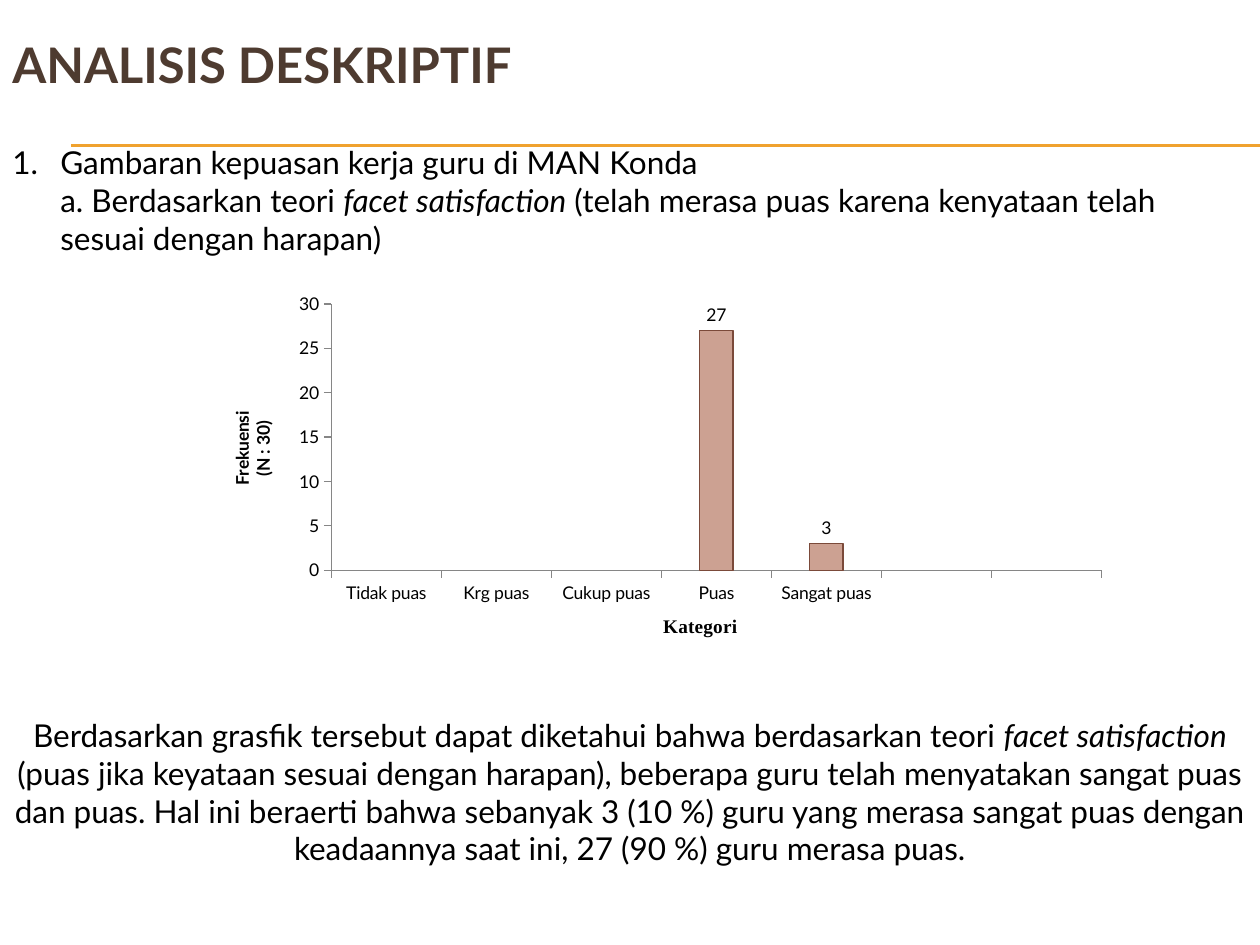
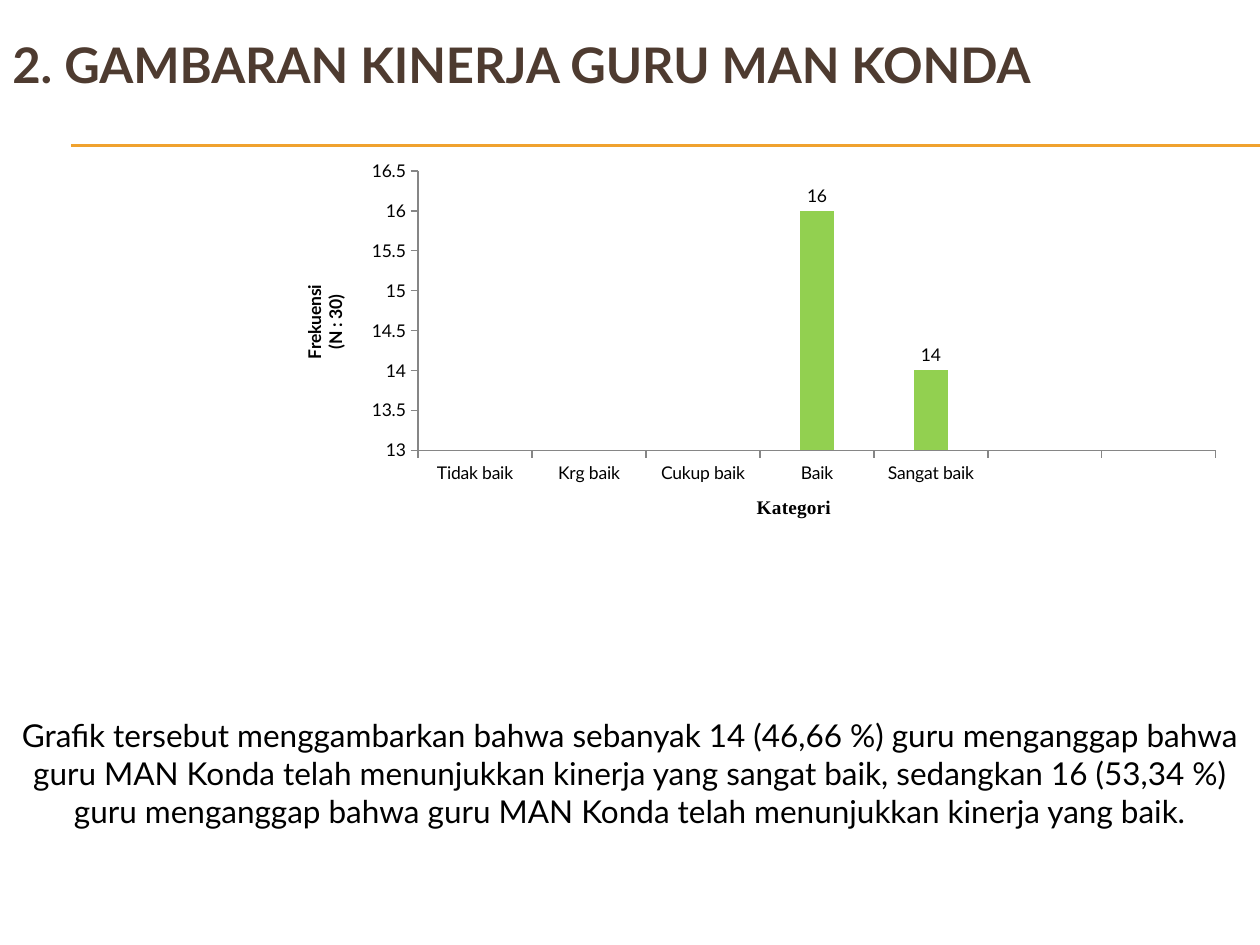
from lxml import etree
from pptx import Presentation
from pptx.chart.data import CategoryChartData
from pptx.dml.color import RGBColor
from pptx.enum.chart import XL_CHART_TYPE, XL_LABEL_POSITION, XL_TICK_LABEL_POSITION, XL_TICK_MARK
from pptx.enum.shapes import MSO_CONNECTOR
from pptx.enum.text import MSO_ANCHOR, PP_ALIGN
from pptx.oxml.ns import qn
from pptx.util import Emu, Pt

COLUMNS = XL_CHART_TYPE.COLUMN_CLUSTERED
OUTSIDE_END = XL_LABEL_POSITION.OUTSIDE_END
LABELS_LOW = XL_TICK_LABEL_POSITION.LOW
TICK_OUTSIDE, TICK_NONE = XL_TICK_MARK.OUTSIDE, XL_TICK_MARK.NONE
STRAIGHT = MSO_CONNECTOR.STRAIGHT
TOP, MIDDLE = MSO_ANCHOR.TOP, MSO_ANCHOR.MIDDLE
LEFT, CENTER = PP_ALIGN.LEFT, PP_ALIGN.CENTER

PX_PER_INCH = 126
WIDTH, HEIGHT = 1260, 945
LIST_INDENT = 48
PLOT_AREA = {"x": 0.14, "y": 0.062, "w": 0.815, "h": 0.72}
CATEGORY_COUNT = 7


def px(length):
    return Emu(round(length * 914400 / PX_PER_INCH))


def rgb(hex_string):
    return RGBColor.from_string(hex_string)


class Deck:
    FONT, SERIF = "Lato", "Times New Roman"
    TITLE, TEXT, ACCENT, AXIS = "4E3B30", "000000", "F0A22E", "868686"
    THIRD_SERIES = "B58B80"

    def __init__(self):
        self.presentation = Presentation()
        self.presentation.slide_width = px(WIDTH)
        self.presentation.slide_height = px(HEIGHT)
        self.slide = None

    def add_slide(self, title):
        """Start a slide with the shared title and double rule."""
        self.slide = self.presentation.slides.add_slide(self.presentation.slide_layouts[6])
        for y in (145, 146):
            self.rule(71, WIDTH, y)
        self.text((0, 0, WIDTH, 129), [[title]], size=28, color=self.TITLE, bold=True)

    def rule(self, left, right, y):
        line = self.slide.shapes.add_connector(STRAIGHT, px(left), px(y), px(right), px(y))
        line.line.color.rgb = rgb(self.ACCENT)
        line.line.width = Pt(0.75)
        etree.SubElement(line._element.spPr, qn("a:effectLst"))

    def style(self, font, size, color, bold=False, name=FONT):
        font.name, font.size, font.bold = name, Pt(size), bold
        font.color.rgb = rgb(color)

    def text(self, box, paragraphs, size=18, color=TEXT, bold=False,
             align=LEFT, anchor=MIDDLE, top_inset=6):
        """Add a text box; every second run of a paragraph is italic."""
        shape = self.slide.shapes.add_textbox(*map(px, box))
        frame = shape.text_frame
        frame.word_wrap = True
        frame.vertical_anchor = anchor
        frame.margin_top = px(top_inset)
        for index, runs in enumerate(paragraphs):
            paragraph = frame.add_paragraph() if index else frame.paragraphs[0]
            paragraph.alignment = align
            self.style(paragraph.font, size, color, bold)
            for position, words in enumerate(runs):
                run = paragraph.add_run()
                run.text = words
                if position % 2:
                    run.font.italic = True
        return frame

    def numbered_text(self, box, paragraphs):
        """Number the first paragraph and indent the others below it."""
        frame = self.text(box, paragraphs)
        for index, paragraph in enumerate(frame.paragraphs):
            properties = paragraph._p.get_or_add_pPr()
            properties.set("marL", str(px(LIST_INDENT)))
            if index == 0:
                properties.set("indent", str(-px(LIST_INDENT)))
                number = etree.Element(qn("a:buAutoNum"), type="arabicPeriod")
                properties.insert_element_before(number, "a:tabLst", "a:defRPr", "a:extLst")

    def conclusion(self, *runs):
        self.text((0, 640, WIDTH, 305), [runs], align=CENTER, anchor=TOP, top_inset=76)

    def axis_title(self, axis, words, size, name):
        frame = axis.axis_title.text_frame
        frame.text = words
        for paragraph in frame.paragraphs:
            self.style(paragraph.font, size, self.TEXT, True, name)
        return frame

    def frequency_chart(self, box, categories, frequencies, scale, color, outline=None):
        """Draw frequencies by category; scale is minimum, maximum and step."""
        data = CategoryChartData()
        data.categories = categories + [""] * (CATEGORY_COUNT - len(categories))
        empty = [None] * CATEGORY_COUNT
        values = frequencies + [None] * (CATEGORY_COUNT - len(frequencies))
        for number, series_values in enumerate((empty, values, empty), 1):
            data.add_series(f"Series {number}", series_values)
        chart = self.slide.shapes.add_chart(COLUMNS, *map(px, box), data).chart
        chart.has_legend = chart.has_title = False
        self.style(chart.font, 10, self.TEXT)

        plot = chart.plots[0]
        plot.gap_width, plot.overlap = 30, 0
        plot.vary_by_categories = False
        for series, fill in zip(plot.series, (self.ACCENT, color, self.THIRD_SERIES)):
            series.format.fill.solid()
            series.format.fill.fore_color.rgb = rgb(fill)
            series.data_labels.show_value = True
            series.data_labels.position = OUTSIDE_END
        if outline:
            plot.series[1].format.line.color.rgb = rgb(outline)
            plot.series[1].format.line.width = Pt(0.75)

        for axis in (chart.category_axis, chart.value_axis):
            axis.has_major_gridlines = False
            axis.major_tick_mark, axis.minor_tick_mark = TICK_OUTSIDE, TICK_NONE
            axis.format.line.color.rgb = rgb(self.AXIS)
            axis.format.line.width = Pt(0.75)
        chart.category_axis.tick_label_position = LABELS_LOW
        value_axis = chart.value_axis
        value_axis.minimum_scale, value_axis.maximum_scale, value_axis.major_unit = scale
        value_axis.tick_labels.number_format = "General"
        value_axis.tick_labels.number_format_is_linked = False
        self.axis_title(chart.category_axis, "Kategori", 11, self.SERIF)
        frame = self.axis_title(value_axis, "Frekuensi\n(N : 30)", 10, self.FONT)
        frame._txBody.find(qn("a:bodyPr")).set("rot", "-5400000")
        self.place_plot(chart)

    def place_plot(self, chart):
        """Fix the inner plot area as fractions of the chart."""
        plot_area = chart._chartSpace.find(f"{qn('c:chart')}/{qn('c:plotArea')}")
        for layout in plot_area.findall(qn("c:layout")):
            plot_area.remove(layout)
        layout = etree.Element(qn("c:layout"))
        manual = etree.SubElement(layout, qn("c:manualLayout"))
        settings = {"layoutTarget": "inner", "xMode": "edge", "yMode": "edge", **PLOT_AREA}
        for tag, value in settings.items():
            etree.SubElement(manual, qn(f"c:{tag}"), val=str(value))
        plot_area.insert(0, layout)


def main():
    deck = Deck()

    deck.add_slide("ANALISIS DESKRIPTIF")
    deck.numbered_text((0, 158, WIDTH, 84), [
        ["Gambaran kepuasan kerja guru di MAN Konda"],
        ["a. Berdasarkan teori ", "facet satisfaction",
         " (telah merasa puas karena kenyataan telah sesuai dengan harapan)"],
    ])
    deck.conclusion(
        "Berdasarkan grasfik tersebut dapat diketahui bahwa berdasarkan teori ",
        "facet satisfaction",
        " (puas jika keyataan sesuai dengan harapan), beberapa guru telah menyatakan "
        "sangat puas dan puas. Hal ini beraerti bahwa sebanyak 3 (10 %) guru yang merasa "
        "sangat puas dengan keadaannya saat ini, 27 (90 %) guru merasa puas.")
    deck.frequency_chart(
        (199, 281, 945, 370),
        ["Tidak puas", "Krg puas", "Cukup puas", "Puas", "Sangat puas"],
        [None, None, None, 27, 3], (0, 30, 5), "CCA192", outline="7B4A3A")

    deck.add_slide("2. GAMBARAN KINERJA GURU MAN KONDA")
    deck.conclusion(
        "Grafik tersebut menggambarkan bahwa sebanyak 14 (46,66 %) guru menganggap bahwa "
        "guru MAN Konda telah menunjukkan kinerja yang sangat baik, sedangkan 16 (53,34 %) "
        "guru menganggap bahwa guru MAN Konda telah menunjukkan kinerja yang baik.")
    deck.frequency_chart(
        (281, 147, 979, 388),
        ["Tidak baik", "Krg baik", "Cukup baik", "Baik", "Sangat baik"],
        [None, None, None, 16, 14], (13, 16.5, 0.5), "92D050")

    deck.presentation.save("out.pptx")


if __name__ == "__main__":
    main()
